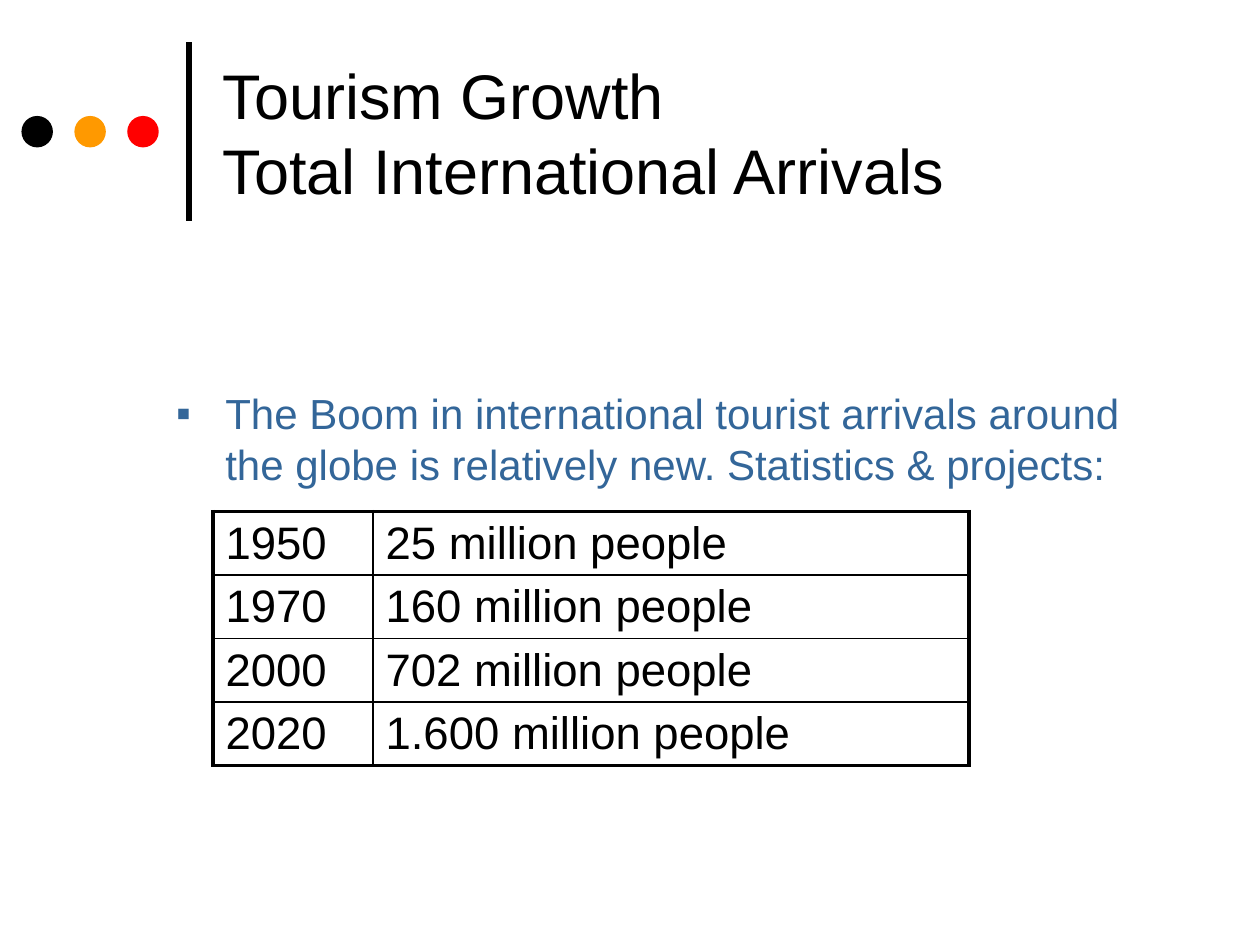
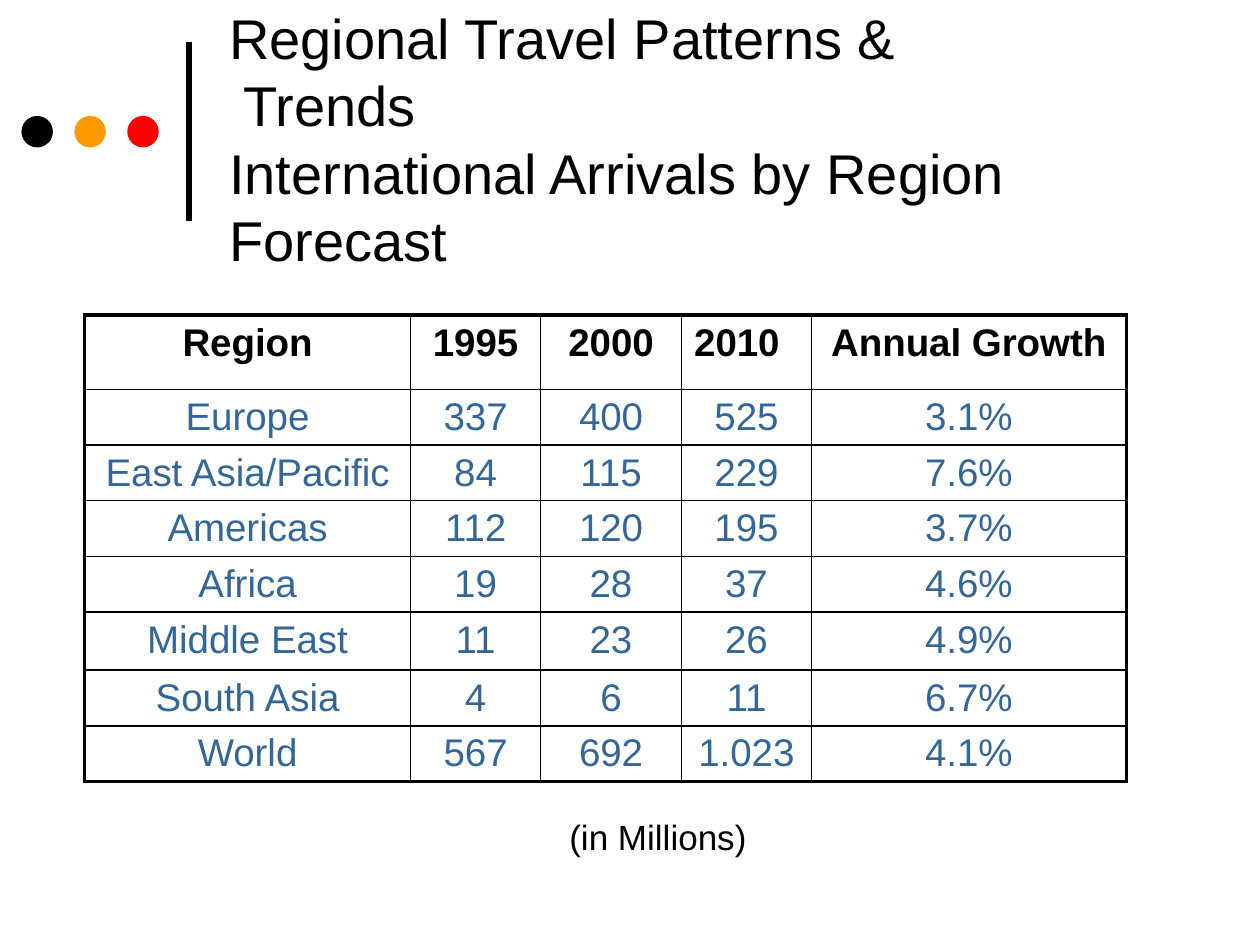
from pptx import Presentation
from pptx.dml.color import RGBColor
from pptx.enum.shapes import MSO_CONNECTOR, MSO_SHAPE
from pptx.enum.text import MSO_ANCHOR, MSO_AUTO_SIZE, PP_ALIGN
from pptx.oxml.ns import qn
from pptx.util import Inches, Pt
from lxml.etree import SubElement

COLORS = {"ink": "000000", "blue": "336699", "orange": "FF9900",
          "red": "FF0000", "paper": "FFFFFF"}
FONT = "Arial"
THIN, THICK = 1, 2.25

ARRIVALS = [
    ("1950", "25 million people"),
    ("1970", "160 million people"),
    ("2000", "702 million people"),
    ("2020", "1.600 million people"),
]
REGIONS = [
    ("Region", "1995", "2000", "2010", "Annual Growth"),
    ("Europe", "337", "400", "525", "3.1%"),
    ("East Asia/Pacific", "84", "115", "229", "7.6%"),
    ("Americas", "112", "120", "195", "3.7%"),
    ("Africa", "19", "28", "37", "4.6%"),
    ("Middle East", "11", "23", "26", "4.9%"),
    ("South Asia", "4", "6", "11", "6.7%"),
    ("World", "567", "692", "1.023", "4.1%"),
]


def rgb(name):
    return RGBColor.from_string(COLORS[name])


def add_run(p, text, size, color="ink", bold=False):
    r = p.add_run()
    r.text = text
    r.font.name = FONT
    r.font.size = Pt(size)
    r.font.bold = bold
    r.font.color.rgb = rgb(color)


def add_text(s, box, lines, size, color="ink", anchor=MSO_ANCHOR.TOP, wrap=True):
    """One paragraph in a text box, its lines parted by line breaks."""
    tf = s.shapes.add_textbox(*map(Inches, box)).text_frame
    tf.word_wrap = wrap
    tf.auto_size = MSO_AUTO_SIZE.NONE
    tf.vertical_anchor = anchor
    p = tf.paragraphs[0]
    for i, line in enumerate(lines):
        if i:
            p.add_line_break()
        add_run(p, line, size, color)
    return p


def add_bullet(p, indent):
    pPr = p._p.get_or_add_pPr()
    pPr.set("marL", str(Inches(indent)))
    pPr.set("indent", str(-Inches(indent)))
    SubElement(pPr, qn("a:buFont"), typeface=FONT)
    SubElement(pPr, qn("a:buChar"), char="▪")


def add_title(s, box, lines, size):
    add_text(s, box, lines, size, anchor=MSO_ANCHOR.MIDDLE)


def add_ornament(s, left, top):
    """Three dots and the upright rule beside the title."""
    size, step = 0.25, 0.42
    for i, color in enumerate(("ink", "orange", "red")):
        dot = s.shapes.add_shape(MSO_SHAPE.OVAL, Inches(left + i * step),
                                 Inches(top + 0.59), Inches(size), Inches(size))
        dot.shadow.inherit = False
        dot.fill.solid()
        dot.fill.fore_color.rgb = rgb(color)
        dot.line.fill.background()
    x = Inches(left + 1.33)
    rule = s.shapes.add_connector(MSO_CONNECTOR.STRAIGHT, x, Inches(top + 1.42),
                                  x, Inches(top))
    rule.line.color.rgb = rgb("ink")
    rule.line.width = Pt(3)
    SubElement(rule._element.spPr, qn("a:effectLst"))


def set_borders(cell, widths):
    """Border widths in points, in the order left, right, top, bottom."""
    tcPr = cell._tc.get_or_add_tcPr()
    for i, (side, width) in enumerate(zip("LRTB", widths)):
        ln = tcPr.makeelement(qn(f"a:ln{side}"), {"w": str(Pt(width))})
        fill = SubElement(ln, qn("a:solidFill"))
        SubElement(fill, qn("a:srgbClr"), val=COLORS["ink"])
        tcPr.insert(i, ln)


def add_grid(s, left, top, col_widths, row_heights, rows, style):
    """Table with a thick frame; style(row, col) gives size, colour, bold, align."""
    n_rows, n_cols = len(rows), len(col_widths)
    frame = s.shapes.add_table(n_rows, n_cols, Inches(left), Inches(top),
                               Inches(sum(col_widths)), Inches(sum(row_heights)))
    table = frame.table
    table.first_row = table.horz_banding = False
    for col, width in zip(table.columns, col_widths):
        col.width = Inches(width)
    for row, height in zip(table.rows, row_heights):
        row.height = Inches(height)
    for i, values in enumerate(rows):
        for j, value in enumerate(values):
            cell = table.cell(i, j)
            cell.fill.solid()
            cell.fill.fore_color.rgb = rgb("paper")
            size, color, bold, align = style(i, j)
            p = cell.text_frame.paragraphs[0]
            p.alignment = align
            add_run(p, value, size, color, bold)
            outer = (j == 0, j == n_cols - 1, i == 0, i == n_rows - 1)
            set_borders(cell, [THICK if edge else THIN for edge in outer])


def arrivals_style(row, col):
    return 26, "ink", False, PP_ALIGN.LEFT


def regions_style(row, col):
    if row:
        return 22, "blue", False, PP_ALIGN.CENTER
    return 22, "ink", True, PP_ALIGN.LEFT if col == 3 else PP_ALIGN.CENTER


def new_slide(prs):
    s = prs.slides.add_slide(prs.slide_layouts[6])
    add_ornament(s, 0.17, 0.33)
    return s


def growth_slide(prs):
    s = new_slide(prs)
    add_title(s, (1.67, 0.21, 7.67, 1.67),
              ["Tourism Growth", "Total International Arrivals"], 36)
    # Lead sentence
    p = add_text(s, (1.3, 3.03, 7.88, 0.9),
                 ["The Boom in international tourist arrivals around the globe "
                  "is relatively new. Statistics & projects:"], 24, "blue")
    add_bullet(p, 0.39)
    # Arrivals by year
    add_grid(s, 1.69, 4.06, [1.27, 4.73], [0.5] * 4, ARRIVALS, arrivals_style)


def regions_slide(prs):
    s = new_slide(prs)
    add_title(s, (1.72, 0.47, 7.72, 1.25),
              ["Regional Travel Patterns &", " Trends",
               "International Arrivals by Region Forecast"], 32)
    # Arrivals by region
    heights = [0.59] + [0.44] * 4 + [0.46] + [0.44] * 2
    add_grid(s, 0.67, 2.5, [2.59, 1.03, 1.12, 1.03, 2.5], heights,
             REGIONS, regions_style)
    # Unit note
    add_text(s, (4.42, 6.42, 1.61, 0.43), ["(in Millions)"], 20, wrap=False)


def main():
    prs = Presentation()
    prs.slide_width, prs.slide_height = Inches(10), Inches(7.5)
    growth_slide(prs)
    regions_slide(prs)
    prs.save("out.pptx")


if __name__ == "__main__":
    main()
